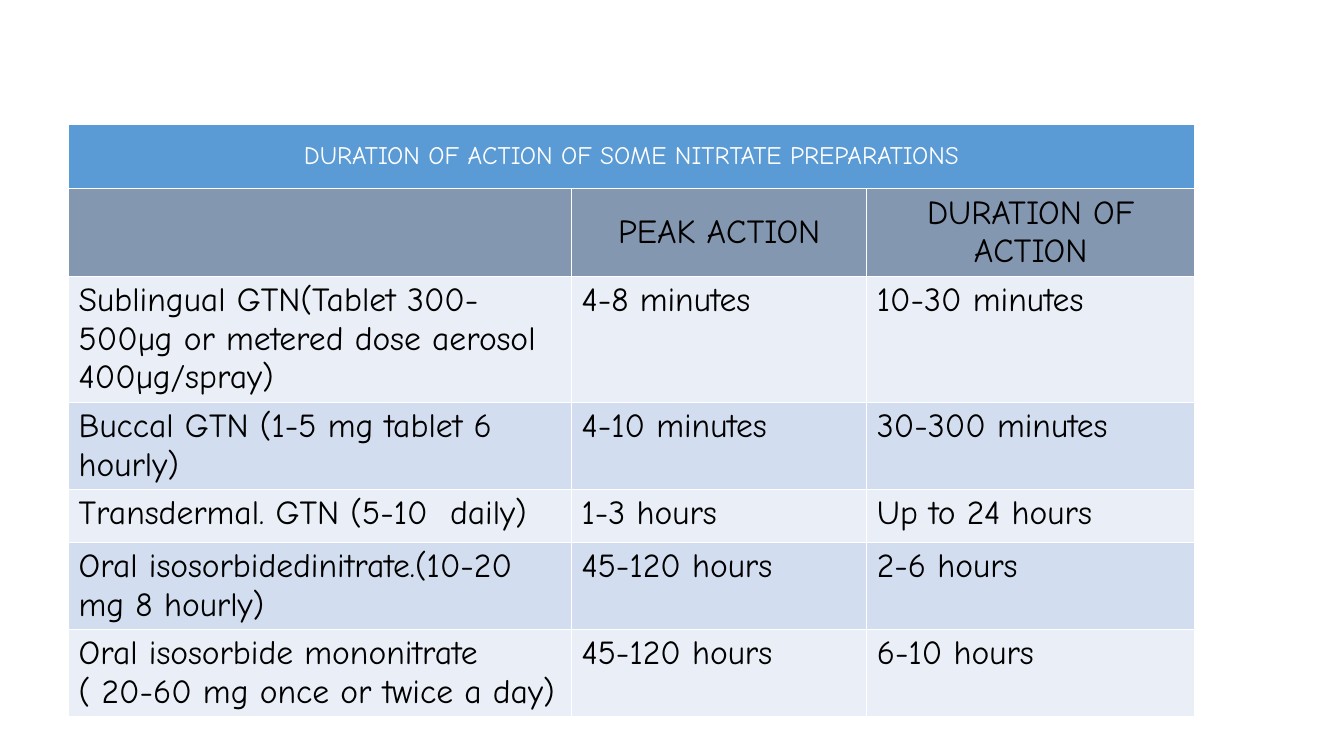
from dataclasses import dataclass

from lxml.etree import SubElement
from pptx import Presentation
from pptx.dml.color import RGBColor
from pptx.enum.text import MSO_ANCHOR as Anchor, PP_ALIGN as Align
from pptx.oxml.ns import qn
from pptx.table import _Cell as Cell
from pptx.util import Pt

FONT = "Comic Neue"
WHITE, BLACK = "FFFFFF", "000000"


@dataclass(frozen=True)
class RowStyle:
    fill: str
    ink: str = BLACK
    size: float = 24
    align: Align = Align.LEFT
    anchor: Anchor = Anchor.TOP


@dataclass(frozen=True)
class Row:
    height: float
    style: RowStyle
    texts: tuple[str, ...]


HEADING = RowStyle("5B9BD5", WHITE, 18, Align.CENTER, Anchor.MIDDLE)
COLUMN_HEADS = RowStyle("8497B0", align=Align.CENTER, anchor=Anchor.MIDDLE)
LIGHT, DARK = RowStyle("EAEFF7"), RowStyle("D2DEEF")

COLUMN_WIDTHS = (359.2, 211, 234)
ROWS = (
    Row(46, HEADING, ("DURATION OF ACTION OF SOME NITRTATE PREPARATIONS",)),
    Row(62, COLUMN_HEADS, ("", "PEAK ACTION", "DURATION OF ACTION")),
    Row(90, LIGHT, ("Sublingual GTN(Tablet 300-500µg or metered dose aerosol 400µg/spray)",
                    "4-8 minutes", "10-30 minutes")),
    Row(62, DARK, ("Buccal GTN (1-5 mg tablet 6 hourly)", "4-10 minutes", "30-300 minutes")),
    Row(37.5, LIGHT, ("Transdermal. GTN (5-10  daily)", "1-3 hours", "Up to 24 hours")),
    Row(62, DARK, ("Oral isosorbidedinitrate.(10-20 mg 8 hourly)", "45-120 hours", "2-6 hours")),
    Row(62, LIGHT, ("Oral isosorbide mononitrate\n( 20-60 mg once or twice a day)",
                    "45-120 hours", "6-10 hours")),
)


def color(value: str) -> RGBColor:
    return RGBColor.from_string(value)


def add_borders(cell: Cell) -> None:
    properties = cell._tc.get_or_add_tcPr()
    for side in ("lnL", "lnR", "lnT", "lnB"):
        line = SubElement(properties, qn(f"a:{side}"), w=str(Pt(1)))
        SubElement(SubElement(line, qn("a:solidFill")), qn("a:srgbClr"), val=WHITE)


def format_cell(cell: Cell, style: RowStyle) -> None:
    add_borders(cell)
    cell.fill.solid()
    cell.fill.fore_color.rgb = color(style.fill)
    cell.vertical_anchor = style.anchor
    font_format = {"name": FONT, "size": Pt(style.size), "bold": False}
    for paragraph in cell.text_frame.paragraphs:
        paragraph.alignment = style.align
        for run in paragraph.runs:
            for attribute, value in font_format.items():
                setattr(run.font, attribute, value)
            run.font.color.rgb = color(style.ink)


def main() -> None:
    deck = Presentation()
    deck.slide_width, deck.slide_height = Pt(960), Pt(540)
    slide = deck.slides.add_slide(deck.slide_layouts[6])

    nitrates = slide.shapes.add_table(
        len(ROWS), len(COLUMN_WIDTHS), Pt(49), Pt(88.8),
        Pt(sum(COLUMN_WIDTHS)), Pt(sum(row.height for row in ROWS))).table
    for column, width in zip(nitrates.columns, COLUMN_WIDTHS):
        column.width = Pt(width)
    nitrates.cell(0, 0).merge(nitrates.cell(0, len(COLUMN_WIDTHS) - 1))

    for table_row, row in zip(nitrates.rows, ROWS):
        table_row.height = Pt(row.height)
        for cell, text in zip(table_row.cells, row.texts):
            cell.text = text
        for cell in table_row.cells:
            format_cell(cell, row.style)

    deck.save("out.pptx")


if __name__ == "__main__":
    main()
